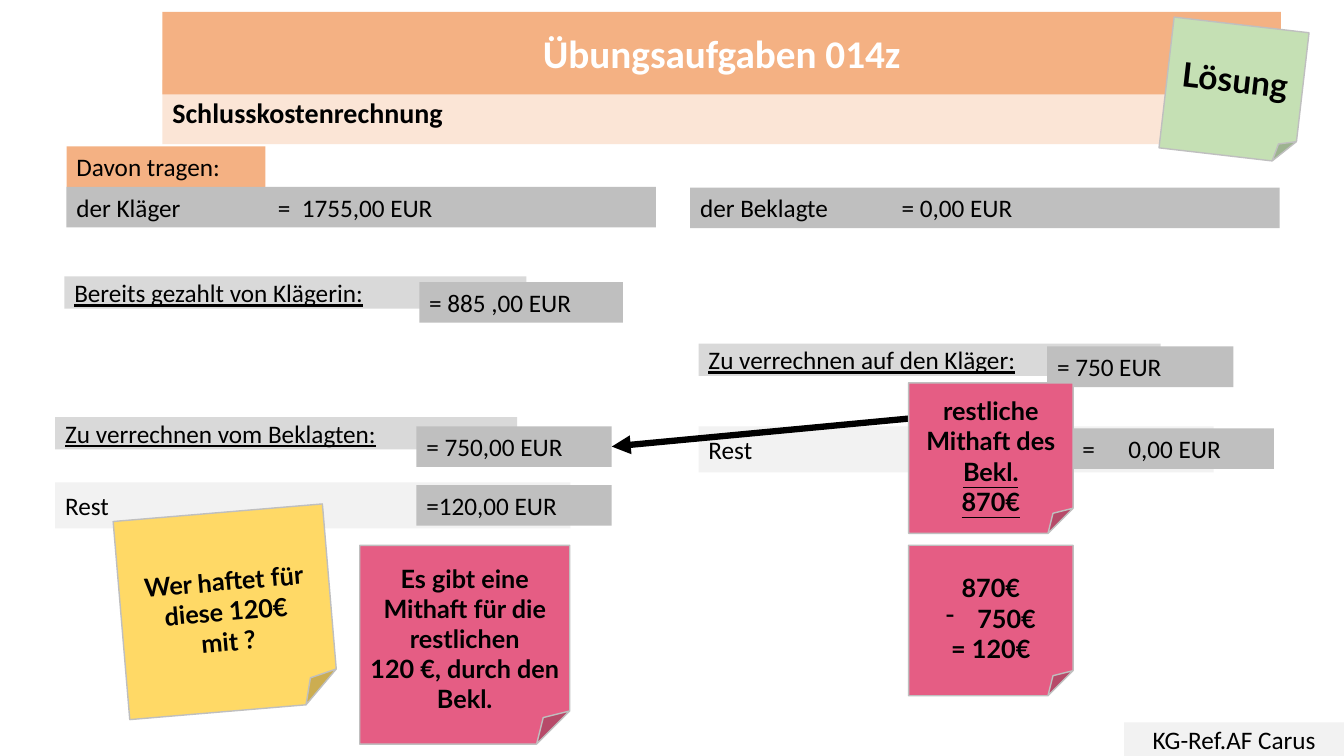
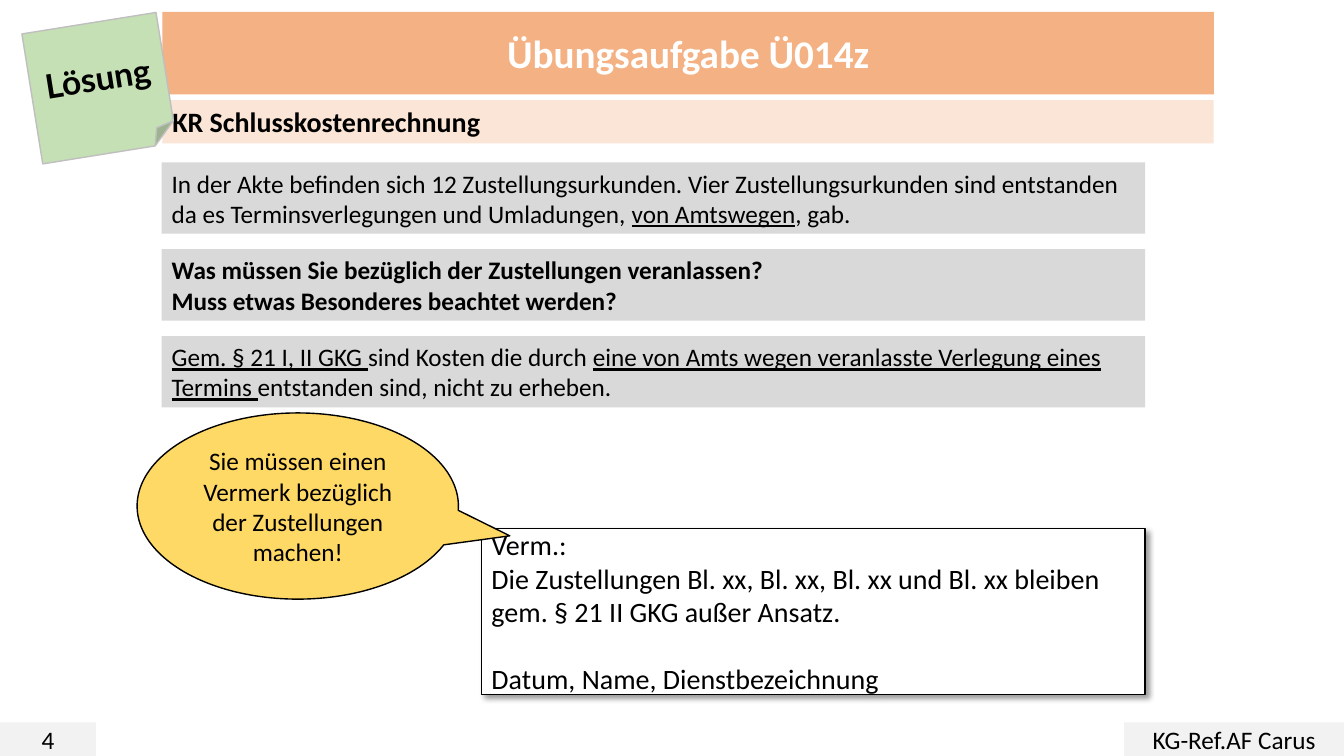
from dataclasses import dataclass

from lxml import etree
from pptx import Presentation
from pptx.dml.color import RGBColor
from pptx.enum.shapes import MSO_CONNECTOR, MSO_SHAPE
from pptx.enum.text import MSO_ANCHOR, MSO_AUTO_SIZE, PP_ALIGN
from pptx.oxml.ns import qn
from pptx.util import Pt

RECT = MSO_SHAPE.RECTANGLE
FOLDED = MSO_SHAPE.FOLDED_CORNER
CALLOUT = MSO_SHAPE.OVAL_CALLOUT
STRAIGHT = MSO_CONNECTOR.STRAIGHT
LEFT, CENTER = PP_ALIGN.LEFT, PP_ALIGN.CENTER
TOP, MIDDLE = MSO_ANCHOR.TOP, MSO_ANCHOR.MIDDLE

BLACK = RGBColor(0x00, 0x00, 0x00)
WHITE = RGBColor(0xFF, 0xFF, 0xFF)
ORANGE = RGBColor(0xF4, 0xB1, 0x83)
PEACH = RGBColor(0xFB, 0xE5, 0xD6)
PALE_GRAY = RGBColor(0xF2, 0xF2, 0xF2)
LIGHT_GRAY = RGBColor(0xD9, 0xD9, 0xD9)
GRAY = RGBColor(0xBF, 0xBF, 0xBF)
GREEN = RGBColor(0xC5, 0xE0, 0xB4)
PINK = RGBColor(0xE5, 0x5D, 0x84)
YELLOW = RGBColor(0xFF, 0xD9, 0x66)

BODY_FONT, NOTE_FONT = "Calibri", "Lato"
HEADER_LEFT = 116
FOOTER_TOP, FOOTER_HEIGHT = 516, 24
AMOUNT_HEIGHT = 29


@dataclass
class Box:
    left: float
    top: float
    width: float
    height: float

    def points(self):
        return Pt(self.left), Pt(self.top), Pt(self.width), Pt(self.height)


@dataclass
class Label:
    """One line of the settlement; tabs are stops in points."""
    text: str
    box: Box
    fill: RGBColor
    tabs: tuple = ()


@dataclass
class Note:
    """A sticky note; text_top is the gap above the text, None centres it."""
    lines: list
    box: Box
    fill: RGBColor
    rotation: float = 0
    text_top: float | None = None
    size: float = 18


def write(tf, lines, *, size=18, font=BODY_FONT, color=BLACK, bold=False,
          align=LEFT, anchor=MIDDLE):
    """Fill a text frame; text between underscores is underlined."""
    tf.word_wrap = True
    tf.auto_size = MSO_AUTO_SIZE.NONE
    tf.vertical_anchor = anchor
    for i, line in enumerate(lines):
        p = tf.add_paragraph() if i else tf.paragraphs[0]
        p.alignment = align
        for j, part in enumerate(line.split("_")):
            if not part:
                continue
            r = p.add_run()
            r.text = part
            r.font.name = font
            r.font.size = Pt(size)
            r.font.bold = bold
            r.font.underline = j % 2 == 1
            r.font.color.rgb = color


def add_box(s, lines, box, fill, *, kind=RECT, line=None, **text_format):
    sp = s.shapes.add_shape(kind, *box.points())
    sp.shadow.inherit = False
    sp.fill.solid()
    sp.fill.fore_color.rgb = fill
    if line is None:
        sp.line.fill.background()
    else:
        sp.line.color.rgb = line
        sp.line.width = Pt(1)
    write(sp.text_frame, lines, **text_format)
    return sp


def set_tabs(p, stops):
    tabs = etree.SubElement(p._p.get_or_add_pPr(), qn("a:tabLst"))
    for stop in stops:
        etree.SubElement(tabs, qn("a:tab"), pos=str(Pt(stop)), algn="l")


def set_dash_bullet(p, indent):
    ppr = p._p.get_or_add_pPr()
    ppr.set("marL", str(Pt(indent)))
    ppr.set("indent", str(-Pt(indent)))
    etree.SubElement(ppr, qn("a:buFontTx"))
    etree.SubElement(ppr, qn("a:buChar"), char="-")


def add_label(s, label):
    sp = add_box(s, [label.text], label.box, label.fill)
    if label.tabs:
        set_tabs(sp.text_frame.paragraphs[0], label.tabs)


def add_note(s, note):
    sp = add_box(s, note.lines, note.box, note.fill, kind=FOLDED, line=GRAY,
                 size=note.size, font=NOTE_FONT, bold=True, align=CENTER,
                 anchor=MIDDLE if note.text_top is None else TOP)
    sp.rotation = note.rotation
    if note.text_top is not None:
        sp.text_frame.margin_top = Pt(note.text_top)
    return sp


def add_solution_note(s, left, top, rotation):
    add_note(s, Note(["Lösung"], Box(left, top, 97, 94), GREEN, rotation, size=24))


def add_arrow(s, x1, y1, x2, y2):
    c = s.shapes.add_connector(STRAIGHT, Pt(x1), Pt(y1), Pt(x2), Pt(y2))
    c.line.color.rgb = BLACK
    c.line.width = Pt(4.5)
    etree.SubElement(c.line._get_or_add_ln(), qn("a:tailEnd"), type="triangle")
    etree.SubElement(c._element.spPr, qn("a:effectLst"))


def add_drop_shadow(sp):
    effects = sp._element.spPr.find(qn("a:effectLst"))
    shadow = etree.SubElement(effects, qn("a:outerShdw"), blurRad=str(Pt(4)),
                              dist=str(Pt(3)), dir=str(45 * 60000),
                              algn="tl", rotWithShape="0")
    color = etree.SubElement(shadow, qn("a:srgbClr"), val=str(BLACK))
    etree.SubElement(color, qn("a:alpha"), val="40000")


def add_title(s, text, width):
    """Turn the title placeholder into the rounded band, above the subtitle."""
    sp = s.shapes.title
    sp.left, sp.top, sp.width, sp.height = Box(HEADER_LEFT, 8.5, width, 59).points()
    geometry = etree.Element(qn("a:prstGeom"), prst="roundRect")
    etree.SubElement(geometry, qn("a:avLst"))
    sp._element.spPr.insert(1, geometry)
    sp.fill.solid()
    sp.fill.fore_color.rgb = ORANGE
    write(sp.text_frame, [text], size=28, color=WHITE, bold=True, align=CENTER)
    sp._element.getparent().append(sp._element)


def new_slide(prs, title, subtitle, width, subtitle_top, subtitle_height):
    s = prs.slides.add_slide(prs.slide_layouts[5])
    add_box(s, [subtitle], Box(HEADER_LEFT, subtitle_top, width, subtitle_height),
            PEACH, size=20, bold=True)
    add_title(s, title, width)
    add_box(s, ["KG-Ref.AF Carus"], Box(803, FOOTER_TOP, 157, FOOTER_HEIGHT),
            PALE_GRAY, align=CENTER)
    return s


def caption(text, left, top):
    return Label(f"_{text}_", Box(left, top, 330, 23), LIGHT_GRAY)


def rest(left, top):
    return Label("Rest", Box(left, top, 368, 33), PALE_GRAY)


def amount(text, left, top, width, tabs=()):
    return Label(text, Box(left, top, width, AMOUNT_HEIGHT), GRAY, tabs)


def build_settlement(prs):
    s = new_slide(prs, "Übungsaufgaben 014z", "Schlusskostenrechnung", 799, 57, 46)
    labels = [
        Label("Davon tragen:", Box(47.5, 104.5, 142, AMOUNT_HEIGHT), ORANGE),
        amount("der Kläger\t=\t1755,00 EUR", 47.5, 133.5, 421, (144, 161)),
        amount("der Beklagte\t= 0,00 EUR", 493, 134, 421, (144,)),
        caption("Bereits gezahlt von Klägerin:", 46, 197.5),
        amount("= 885 ,00 EUR", 299.5, 201.5, 145.5),
        caption("Zu verrechnen vom Beklagten:", 39.5, 298),
        amount("= 750,00 EUR", 297.5, 304.5, 139.5),
        rest(39.5, 344.5),
        amount("=120,00 EUR", 297.5, 346.5, 139.5),
        caption("Zu verrechnen auf den Kläger:", 499, 245.5),
        amount("= 750 EUR", 748, 247.5, 133),
        rest(499, 304.5),
        amount("=\t0,00 EUR", 766, 306, 144, (33,)),
    ]
    for label in labels:
        add_label(s, label)
    add_arrow(s, 649, 299, 437, 319)

    add_solution_note(s, 833, 17.5, 6.6)
    notes = [
        Note(["restliche Mithaft des _Bekl._", "_870€_"],
             Box(649, 273.5, 117.5, 107.5), PINK, text_top=9),
        Note(["Es gibt eine Mithaft für die restlichen", "120 €, durch den Bekl."],
             Box(257, 389.5, 150, 142), PINK, text_top=12.5),
        Note(["Wer haftet für diese 120€", "mit ?"],
             Box(86.5, 366, 150, 142), YELLOW, -4.8, text_top=38),
    ]
    for note in notes:
        add_note(s, note)
    difference = add_note(s, Note(["870€", "750€", "= 120€"],
                                  Box(649, 389.5, 117.5, 107.5), PINK, text_top=19.5))
    set_dash_bullet(difference.text_frame.paragraphs[1], 22.5)


def build_service_costs(prs):
    s = new_slide(prs, "Übungsaufgabe Ü014z", "KR Schlusskostenrechnung", 751, 71.5, 31)
    add_box(s, ["4"], Box(0, FOOTER_TOP, 68.5, FOOTER_HEIGHT), PALE_GRAY, align=CENTER)
    add_solution_note(s, 22.5, 16, -9.1)
    statements = [
        (["In der Akte befinden sich 12 Zustellungsurkunden. Vier Zustellungsurkunden "
          "sind entstanden da es Terminsverlegungen und Umladungen, "
          "_von Amtswegen_, gab."], False),
        (["Was müssen Sie bezüglich der Zustellungen veranlassen?",
          "Muss etwas Besonderes beachtet werden?"], True),
        (["_Gem. § 21 I, II GKG _sind Kosten die durch _eine von Amts wegen "
          "veranlasste Verlegung eines Termins _entstanden sind, nicht zu erheben."],
         False),
    ]
    for i, (lines, bold) in enumerate(statements):
        add_box(s, lines, Box(115.5, 116 + 62 * i, 702.5, 51), LIGHT_GRAY, bold=bold)

    memo = add_box(s, ["Verm.:",
                       "Die Zustellungen Bl. xx, Bl. xx, Bl. xx und Bl. xx bleiben",
                       "gem. § 21 II GKG außer Ansatz.",
                       "Datum, Name, Dienstbezeichnung"],
                   Box(344, 377.5, 474, 118.5), WHITE, line=BLACK, size=20)
    memo.text_frame.paragraphs[-1].space_before = Pt(24)
    add_drop_shadow(memo)

    hint = add_box(s, ["Sie müssen einen Vermerk bezüglich der Zustellungen machen!"],
                   Box(98, 295, 229.5, 133), YELLOW, kind=CALLOUT, line=BLACK,
                   align=CENTER)
    hint.adjustments[0], hint.adjustments[1] = 0.66, 0.16


def main():
    prs = Presentation()
    prs.slide_width, prs.slide_height = Pt(960), Pt(540)
    build_settlement(prs)
    build_service_costs(prs)
    prs.save("out.pptx")


if __name__ == "__main__":
    main()
